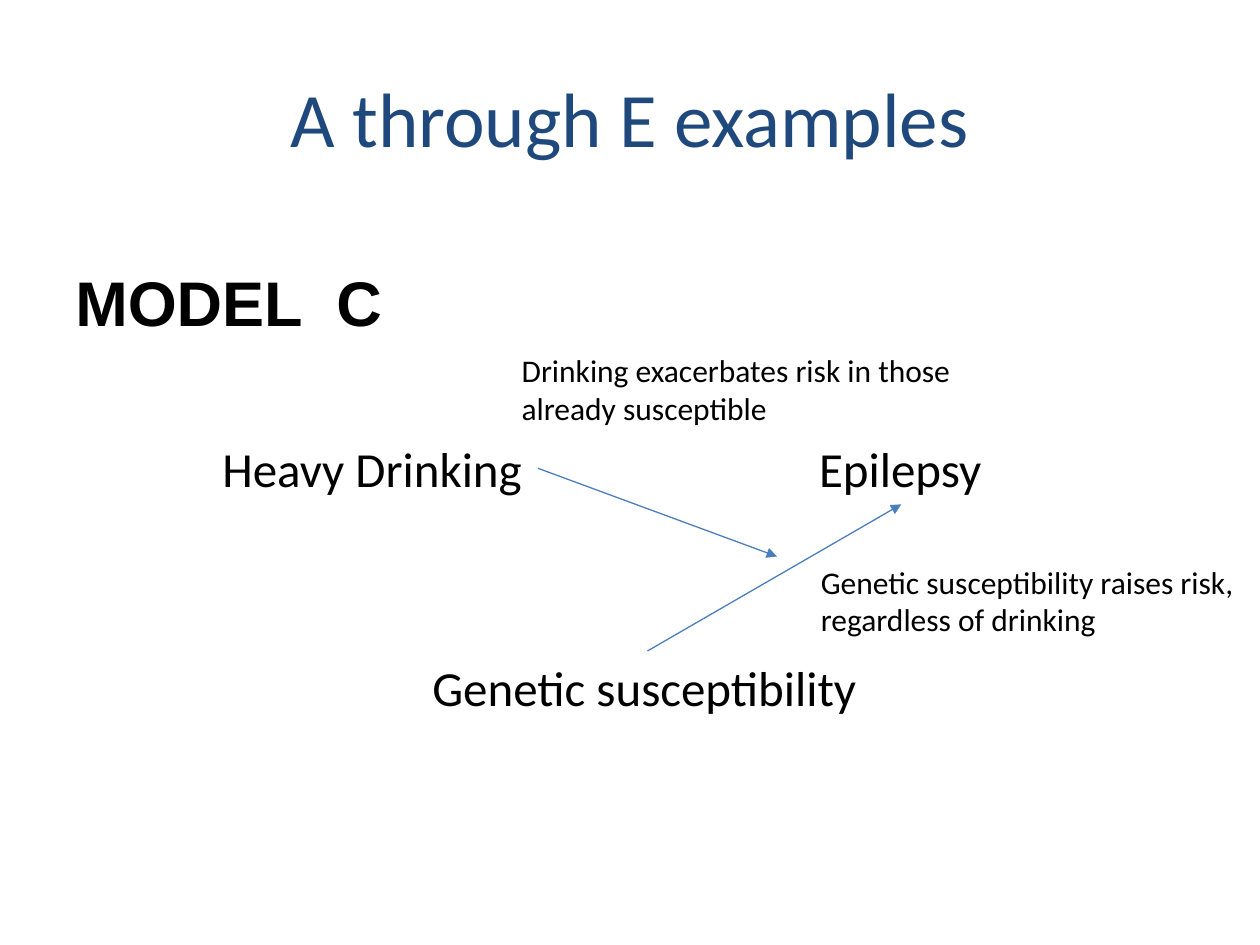
from dataclasses import dataclass

from lxml.etree import SubElement
from pptx import Presentation
from pptx.dml.color import RGBColor
from pptx.enum.shapes import MSO_CONNECTOR
from pptx.enum.text import MSO_ANCHOR, MSO_AUTO_SIZE, PP_ALIGN
from pptx.oxml.ns import qn
from pptx.util import Pt


@dataclass(frozen=True)
class Theme:
    """Colours, fonts and type sizes of the slide."""

    title_color: RGBColor = RGBColor(0x1F, 0x49, 0x7D)
    text_color: RGBColor = RGBColor(0, 0, 0)
    arrow_color: RGBColor = RGBColor(0x4B, 0x7E, 0xBC)
    body_font: str = "Calibri"
    label_font: str = "Arial"
    title_size: int = 44
    label_size: int = 36
    factor_size: int = 28
    note_size: int = 18
    arrow_width: float = 0.75


THEME = Theme()
TOP, RIGHT, BOTTOM = 0, 3, 2


def add_text(slide, text, box, size, color=THEME.text_color, font=THEME.body_font,
             bold=False, wrap=False, align=PP_ALIGN.LEFT, anchor=MSO_ANCHOR.TOP,
             auto_size=MSO_AUTO_SIZE.SHAPE_TO_FIT_TEXT):
    """Add a formatted text box at (left, top, width, height) and return it."""
    shape = slide.shapes.add_textbox(*(Pt(length) for length in box))
    frame = shape.text_frame
    frame.word_wrap = wrap
    frame.auto_size = auto_size
    frame.vertical_anchor = anchor
    paragraph = frame.paragraphs[0]
    paragraph.alignment = align
    run = paragraph.add_run()
    run.text = text
    run.font.name = font
    run.font.size = Pt(size)
    run.font.bold = bold
    run.font.color.rgb = color
    return shape


def add_factor(slide, text, left, top, width):
    """Add the name of one factor of the causal model."""
    return add_text(slide, text, (left, top, width, 41.2), THEME.factor_size)


def add_note(slide, text, left, top):
    """Add a wrapped note that explains an arrow."""
    return add_text(slide, text, (left, top, 278, 51), THEME.note_size, wrap=True)


def add_arrow(slide, source, side, end):
    """Add an arrow from a side of the source shape to a point and return it."""
    connector = slide.shapes.add_connector(
        MSO_CONNECTOR.STRAIGHT, 0, 0, *(Pt(length) for length in end))
    connector.begin_connect(source, side)
    connector.line.color.rgb = THEME.arrow_color
    connector.line.width = Pt(THEME.arrow_width)
    SubElement(connector.line._get_or_add_ln(), qn("a:tailEnd"), type="triangle")
    SubElement(connector._element.spPr, qn("a:effectLst"))
    return connector


def main():
    """Build the slide and save it."""
    presentation = Presentation()
    presentation.slide_width = Pt(720)
    presentation.slide_height = Pt(540)
    slide = presentation.slides.add_slide(presentation.slide_layouts[6])

    add_text(slide, "A through E examples", (36, 21.6, 648, 90), THEME.title_size,
             color=THEME.title_color, wrap=True, align=PP_ALIGN.CENTER,
             anchor=MSO_ANCHOR.MIDDLE, auto_size=MSO_AUTO_SIZE.NONE)
    add_text(slide, "MODEL  C", (36, 147, 191.5, 51), THEME.label_size,
             font=THEME.label_font, bold=True)

    drinking = add_factor(slide, "Heavy Drinking", 120, 247, 187.4)
    epilepsy = add_factor(slide, "Epilepsy", 461, 247, 108)
    genetics = add_factor(slide, "Genetic susceptibility", 240, 372, 260)

    risk_arrow = add_arrow(slide, genetics, TOP, (515, 288))
    risk_arrow.end_connect(epilepsy, BOTTOM)
    add_arrow(slide, drinking, RIGHT, (444, 318))

    add_note(slide, "Genetic susceptibility raises risk, regardless of drinking", 462, 318)
    add_note(slide, "Drinking exacerbates risk in those already susceptible", 291, 197)

    presentation.save("out.pptx")


if __name__ == "__main__":
    main()
